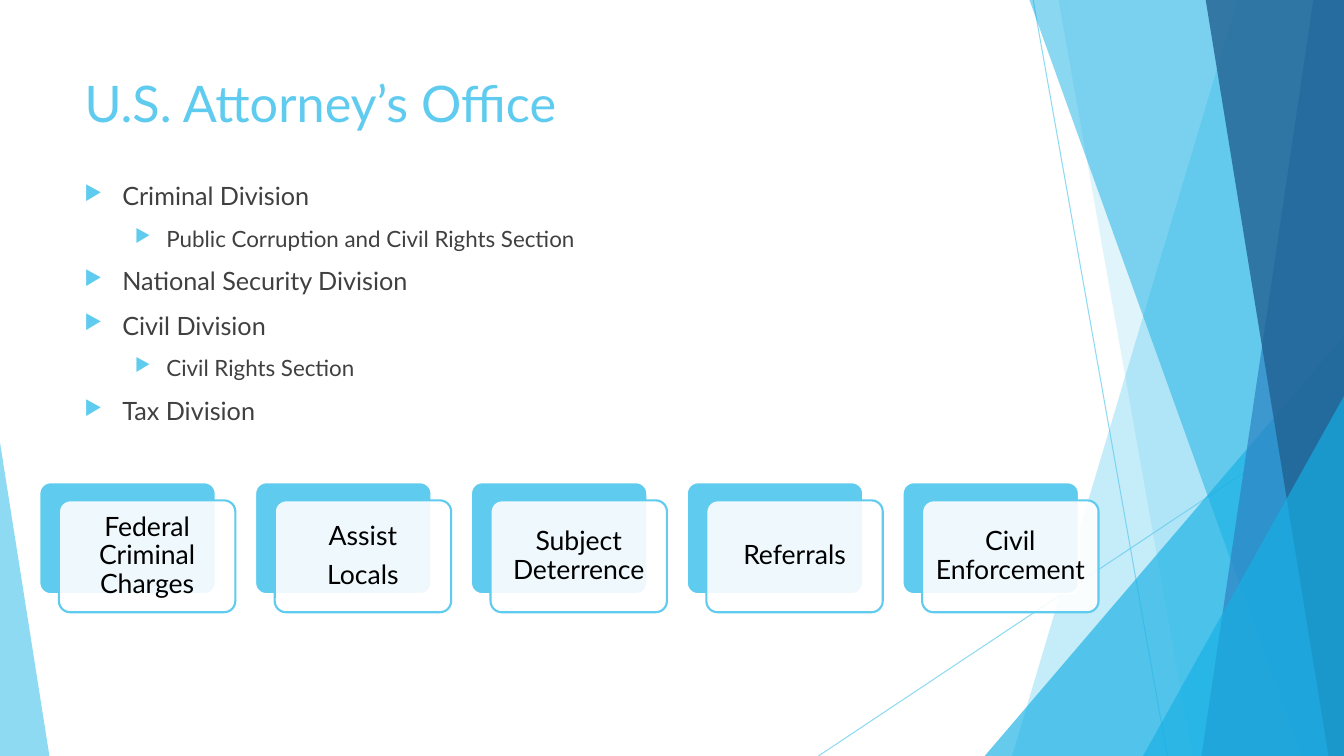
from pptx import Presentation
from pptx.dml.color import RGBColor
from pptx.enum.shapes import MSO_CONNECTOR as Connector, MSO_SHAPE as Shape
from pptx.enum.text import MSO_ANCHOR as Anchor, PP_ALIGN as Align
from pptx.oxml.ns import qn
from pptx.util import Pt
from lxml.etree import SubElement

# Content
TITLE = "U.S. Attorney’s Office"
DIVISIONS = [  # level, text
    (0, "Criminal Division"),
    (1, "Public Corruption and Civil Rights Section"),
    (0, "National Security Division"),
    (0, "Civil Division"),
    (1, "Civil Rights Section"),
    (0, "Tax Division"),
]
ROLES = [
    ["Federal Criminal Charges"],
    ["Assist", "Locals"],
    ["Subject Deterrence"],
    ["Referrals"],
    ["Civil Enforcement"],
]

# Style
FONT = "Lato"
COLORS = {"sky": "5FCBEF", "cyan": "17B0E4", "blue": "2E83C3", "navy": "226292",
          "white": "FFFFFF", "black": "000000", "text": "404040"}
WIDTH, HEIGHT = 960, 540
LEVELS = [  # text size, left margin, hanging indent
    (18, 27, 27),
    (16, 58.5, 22.5),
]

# Background: rays start at a top edge x and end at a bottom edge x
RAY_LINES = [(738, 0, 833.8, HEIGHT), (WIDTH, 290.2, 584.6, HEIGHT)]
BANDS = [  # ("band", top x, bottom x) or ("triangle", left, top, width, apex), colour, opacity
    (("band", 884.2, 722.9), "sky", 36),
    (("band", 756, 851.8), "sky", 20),
    (("triangle", 703.4, 239.8, 256.6, 1), "cyan", 66),
    (("band", 735.1, 929.5), "cyan", 50),
    (("band", 938.2, 858.2), "blue", 70),
    (("band", 861.1, 949), "navy", 80),
    (("triangle", 816.5, 283, 143.5, 1), "cyan", 66),
    (("triangle", 0, 316.1, 35.3, 0), "sky", 70),
]

# Role cards
CARD_LEFT, CARD_TOP, CARD_PITCH = 28.1, 344.5, 154.15
CARD_WIDTH, CARD_HEIGHT = 126, 79.9
SHIFT_X, SHIFT_Y = 14, 12.9


def color(name):
    return RGBColor.from_string(COLORS[name])


def set_opacity(color_parent, percent):
    tone = next(color_parent.iter(qn("a:srgbClr")))
    SubElement(tone, qn("a:alpha"), val=str(percent * 1000))


def paint(shape, fill, opacity=100, line=None):
    shape.shadow.inherit = False
    shape.fill.solid()
    shape.fill.fore_color.rgb = color(fill)
    if opacity < 100:
        set_opacity(shape.fill._xPr.find(qn("a:solidFill")), opacity)
    if line:
        shape.line.color.rgb = color(line)
        shape.line.width = Pt(1.5)
    else:
        shape.line.fill.background()


def add_run(para, text, size, tone):
    span = para.add_run()
    span.text = text
    span.font.name = FONT
    span.font.size = Pt(size)
    span.font.color.rgb = color(tone)


def add_paragraph(frame, index):
    return frame.add_paragraph() if index else frame.paragraphs[0]


def add_text_frame(page, left, top, width, height):
    frame = page.shapes.add_textbox(Pt(left), Pt(top), Pt(width), Pt(height)).text_frame
    frame.word_wrap = True
    return frame


def set_bullet(para, margin, hanging):
    props = para._p.get_or_add_pPr()
    props.set("marL", str(Pt(margin)))
    props.set("indent", str(-Pt(hanging)))
    SubElement(SubElement(props, qn("a:buClr")), qn("a:srgbClr"), val=COLORS["sky"])
    SubElement(props, qn("a:buSzPct"), val="80000")
    SubElement(props, qn("a:buChar"), char="▶")


def add_ray_line(page, ends):
    ray = page.shapes.add_connector(Connector.STRAIGHT, *map(Pt, ends))
    ray.line.color.rgb = color("sky")
    ray.line.width = Pt(0.75)
    props = ray._element.spPr
    set_opacity(props, 70)
    SubElement(props, qn("a:effectLst"))


def add_band(page, top_x, bottom_x):
    edge = -0.7
    corners = [(WIDTH, edge), (WIDTH, HEIGHT), (bottom_x, HEIGHT)]
    builder = page.shapes.build_freeform(Pt(top_x), Pt(edge))
    builder.add_line_segments([(Pt(x), Pt(y)) for x, y in corners], close=True)
    return builder.convert_to_shape()


def add_triangle(page, left, top, width, apex):
    triangle = page.shapes.add_shape(Shape.ISOSCELES_TRIANGLE, Pt(left), Pt(top),
                                     Pt(width), Pt(HEIGHT - top))
    triangle.adjustments[0] = apex
    return triangle


def add_card(page, left, top):
    card = page.shapes.add_shape(Shape.ROUNDED_RECTANGLE, Pt(left), Pt(top),
                                 Pt(CARD_WIDTH), Pt(CARD_HEIGHT))
    card.adjustments[0] = 0.1
    return card


def add_role(page, left, lines):
    paint(add_card(page, left, CARD_TOP), "sky", line="white")
    front = add_card(page, left + SHIFT_X, CARD_TOP + SHIFT_Y)
    paint(front, "white", 90, "sky")
    frame = front.text_frame
    frame.word_wrap = True
    frame.vertical_anchor = Anchor.MIDDLE
    frame.margin_left = frame.margin_right = Pt(5.7)
    frame.margin_top = frame.margin_bottom = Pt(5.7)
    for index, line in enumerate(lines):
        para = add_paragraph(frame, index)
        para.alignment = Align.CENTER
        para.line_spacing = 0.9
        para.space_after = Pt(7)
        add_run(para, line, 19, "black")


def main():
    deck = Presentation()
    deck.slide_width, deck.slide_height = Pt(WIDTH), Pt(HEIGHT)
    page = deck.slides.add_slide(deck.slide_layouts[6])

    # Background rays
    for ends in RAY_LINES:
        add_ray_line(page, ends)
    makers = {"band": add_band, "triangle": add_triangle}
    for (kind, *place), tone, opacity in BANDS:
        paint(makers[kind](page, *place), tone, opacity)

    # Title
    frame = add_text_frame(page, 53.3, 48, 677, 104)
    add_run(frame.paragraphs[0], TITLE, 36, "sky")

    # Divisions
    frame = add_text_frame(page, 53.3, 125.5, 690, 220)
    for index, (level, text) in enumerate(DIVISIONS):
        size, margin, hanging = LEVELS[level]
        para = add_paragraph(frame, index)
        para.level = level
        para.space_before = Pt(10)
        set_bullet(para, margin, hanging)
        add_run(para, text, size, "text")

    # Role cards
    for index, lines in enumerate(ROLES):
        add_role(page, CARD_LEFT + index * CARD_PITCH, lines)

    deck.save("out.pptx")


if __name__ == "__main__":
    main()
